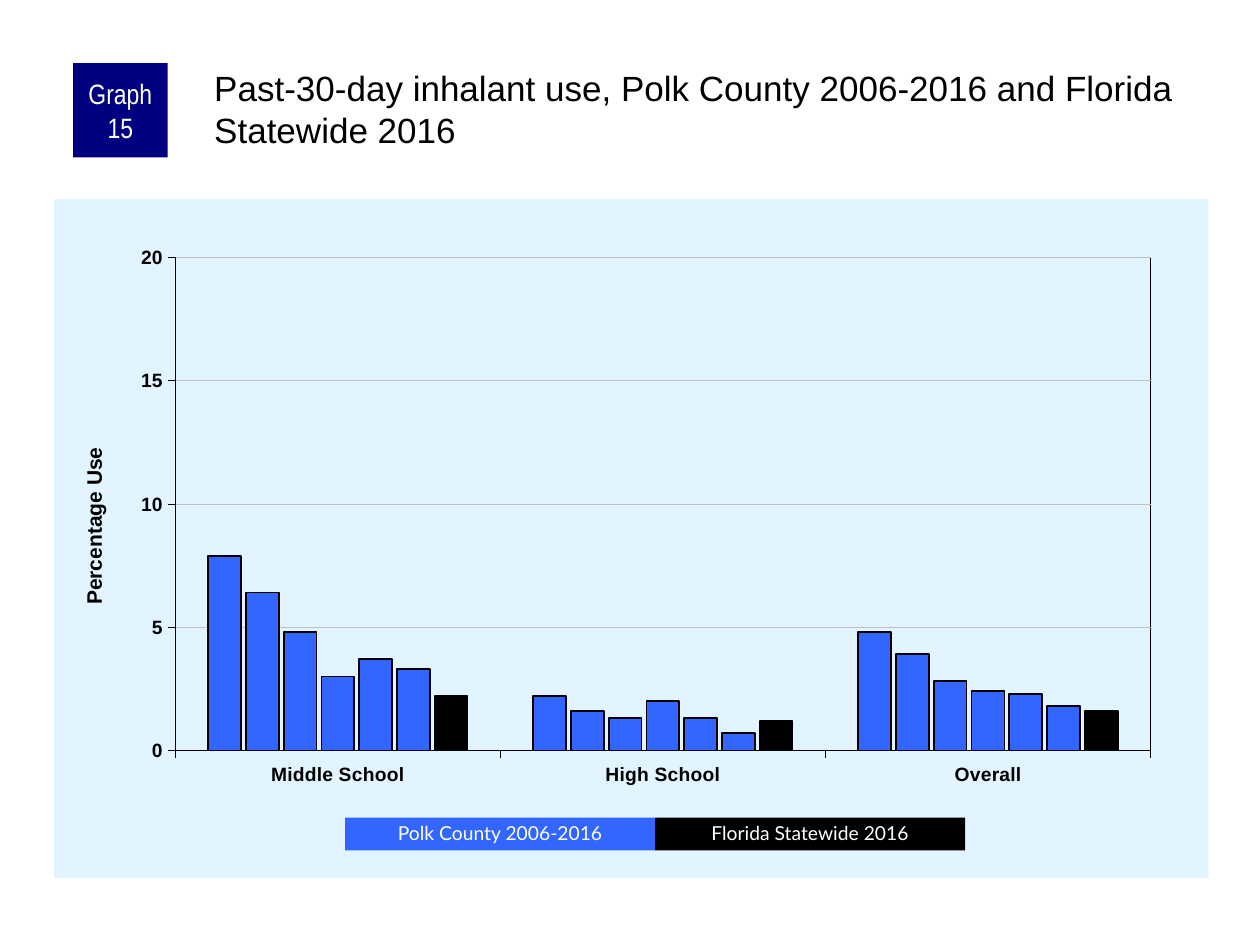
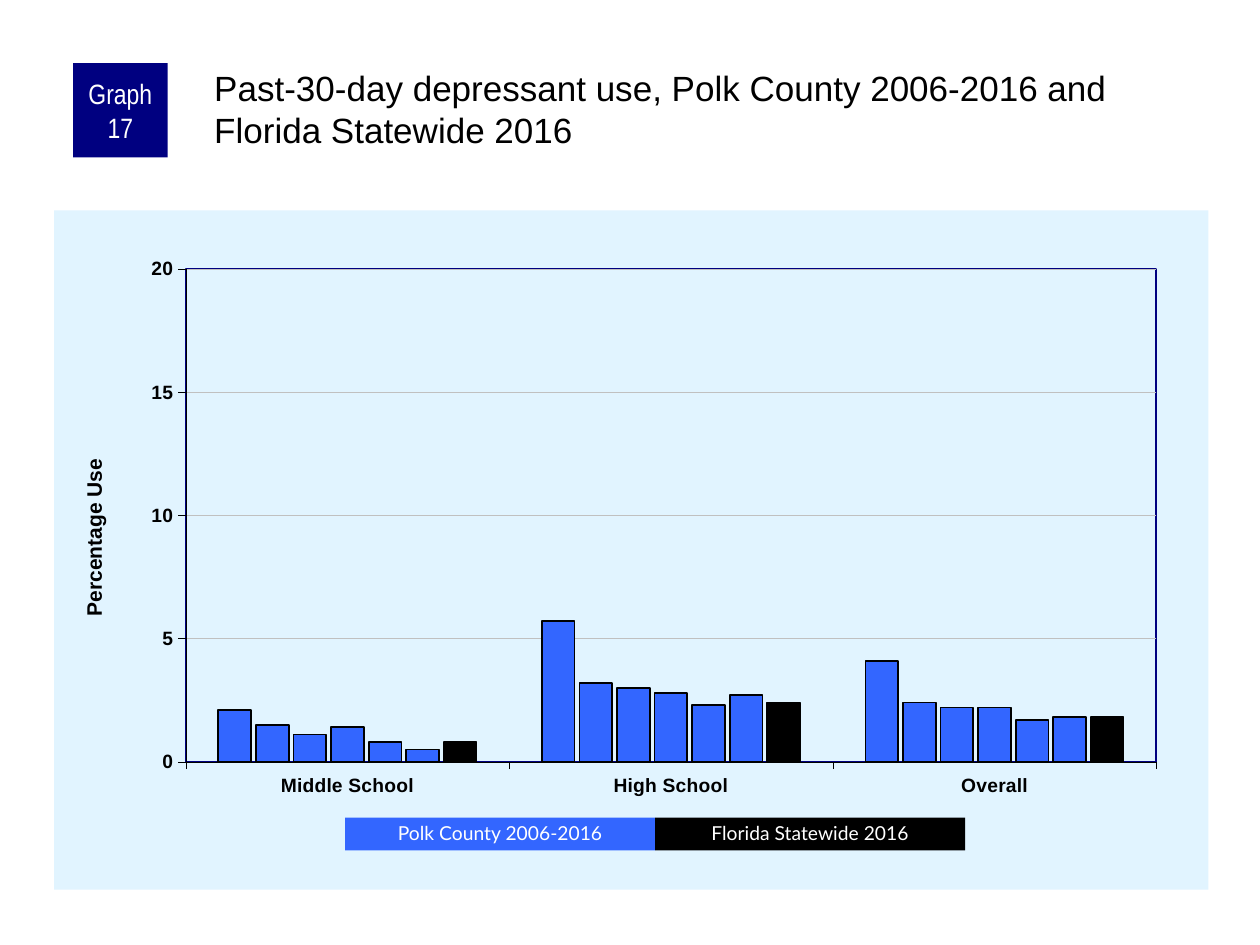
"""Builds two slides that chart past-30-day drug use by school level."""
from pptx import Presentation
from pptx.chart.data import CategoryChartData
from pptx.dml.color import RGBColor
from pptx.enum.chart import XL_CHART_TYPE, XL_TICK_MARK
from pptx.enum.shapes import MSO_SHAPE
from pptx.enum.text import MSO_ANCHOR, PP_ALIGN
from pptx.oxml import parse_xml
from pptx.oxml.ns import nsdecls, qn
from pptx.util import Inches, Pt

COLUMN = XL_CHART_TYPE.COLUMN_CLUSTERED
OUT = XL_TICK_MARK.OUTSIDE
RECT = MSO_SHAPE.RECTANGLE
MIDDLE, TOP = MSO_ANCHOR.MIDDLE, MSO_ANCHOR.TOP
CENTER, LEFT = PP_ALIGN.CENTER, PP_ALIGN.LEFT

BLUE, BLACK, WHITE, NAVY = "3366FF", "000000", "FFFFFF", "000080"
PALE, GREY = "E1F4FF", "C0C0C0"
LEVELS = ["Middle School", "High School", "Overall"]

GRAPHS = [
    {
        "label": "Graph 15",
        "title": "Past-30-day inhalant use, Polk County 2006-2016 and Florida Statewide 2016",
        "top": 1.58, "plot": (0.105, 0.086, 0.845, 0.726), "frame": (BLACK, 0.5),
        "rows": [(7.9, 2.2, 4.8), (6.4, 1.6, 3.9), (4.8, 1.3, 2.8), (3, 2, 2.4),
                 (3.7, 1.3, 2.3), (3.3, 0.7, 1.8), (2.2, 1.2, 1.6)],
    },
    {
        "label": "Graph 17",
        "title": "Past-30-day depressant use, Polk County 2006-2016 and Florida Statewide 2016",
        "top": 1.67, "plot": (0.114, 0.086, 0.841, 0.726), "frame": (NAVY, 1),
        "rows": [(2.1, 5.7, 4.1), (1.5, 3.2, 2.4), (1.1, 3, 2.2), (1.4, 2.8, 2.2),
                 (0.8, 2.3, 1.7), (0.5, 2.7, 1.8), (0.8, 2.4, 1.8)],
    },
]


def rgb(code):
    return RGBColor.from_string(code)


def place(node, index, spots, target=""):
    for old in node.findall(qn("c:layout")):
        node.remove(old)
    modes = "".join(f'<c:{key}Mode val="edge"/>' for key in "xy")
    sides = "".join(f'<c:{key} val="{spot}"/>' for key, spot in zip("xywh", spots))
    node.insert(index, parse_xml(
        f'<c:layout {nsdecls("c")}><c:manualLayout>{target}{modes}{sides}'
        "</c:manualLayout></c:layout>"))


deck = Presentation()
deck.slide_width, deck.slide_height = Inches(10), Inches(7.5)

for graph in GRAPHS:
    slide = deck.slides.add_slide(deck.slide_layouts[6])

    data = CategoryChartData()
    data.categories = LEVELS
    for count, row in enumerate(graph["rows"], 1):
        data.add_series(f"Series {count}", row)
    chart = slide.shapes.add_chart(
        COLUMN, Inches(0.43), Inches(graph["top"]), Inches(9.16), Inches(5.39), data).chart
    chart.has_title = chart.has_legend = False
    chart.font.name, chart.font.size = "Arial", Pt(8)
    chart.font.color.rgb = rgb(BLACK)

    bars = chart.plots[0]
    bars.gap_width, bars.overlap, bars.vary_by_categories = 200, -15, False
    for count, series in enumerate(bars.series, 1):
        style = series.format
        style.fill.solid()
        style.fill.fore_color.rgb = rgb(BLACK if count == len(graph["rows"]) else BLUE)
        style.line.color.rgb = rgb(BLACK)
        style.line.width = Pt(1)

    value = chart.value_axis
    for axis in (chart.category_axis, value):
        axis.major_tick_mark = OUT
        axis.format.line.color.rgb = rgb(BLACK)
        axis.format.line.width = Pt(0.25)
        for name, setting in {"name": "Arial", "size": Pt(11), "bold": True}.items():
            setattr(axis.tick_labels.font, name, setting)
        axis.tick_labels.font.color.rgb = rgb(BLACK)
    for name, setting in {"minimum_scale": 0, "maximum_scale": 20, "major_unit": 5}.items():
        setattr(value, name, setting)
    grid = value.major_gridlines.format.line
    grid.color.rgb = rgb(GREY)
    grid.width = Pt(0.25)

    frame = value.axis_title.text_frame
    frame.text = "Percentage Use"
    frame._txBody.bodyPr.set("rot", "-5400000")
    font = frame.paragraphs[0].runs[0].font
    for name, setting in {"name": "Arial", "size": Pt(12), "bold": True}.items():
        setattr(font, name, setting)
    font.color.rgb = rgb(BLACK)
    place(value.axis_title._element, 1, (0.02, 0.36))

    root = chart._chartSpace.find(qn("c:chart"))
    area = root.find(qn("c:plotArea"))
    place(area, 0, graph["plot"], '<c:layoutTarget val="inner"/>')
    edge, width = graph["frame"]
    area.append(parse_xml(
        f'<c:spPr {nsdecls("c", "a")}><a:noFill/><a:ln w="{Pt(width)}"><a:solidFill>'
        f'<a:srgbClr val="{edge}"/></a:solidFill></a:ln></c:spPr>'))
    root.addnext(parse_xml(
        f'<c:spPr {nsdecls("c", "a")}><a:solidFill><a:srgbClr val="{PALE}"/></a:solidFill>'
        "<a:ln><a:noFill/></a:ln></c:spPr>"))

    key = {"font": "Lato", "size": 11, "ink": WHITE, "pad": (0.1, 0.05, 0.1, 0.05),
           "anchor": MIDDLE, "align": CENTER, "space": 0.9}
    badge = {"font": "Arial Narrow", "size": 16, "ink": WHITE, "pad": (0.05, 0, 0.05, 0),
             "anchor": MIDDLE, "align": CENTER, "space": None}
    head = {"font": "Arial", "size": 20, "ink": BLACK, "pad": (0.03, 0.03, 0, 0),
            "anchor": TOP, "align": LEFT, "space": None}
    for text, spot, fill, look in [
        (graph["label"], (0.58, 0.5, 0.75, 0.75), NAVY, badge),
        (graph["title"], (1.67, 0.5, 7.92, 0.83), None, head),
        ("Polk County 2006-2016", (2.74, 6.49, 2.46, 0.26), BLUE, key),
        ("Florida Statewide 2016", (5.2, 6.49, 2.46, 0.26), BLACK, key),
    ]:
        spot = [Inches(side) for side in spot]
        if fill:
            box = slide.shapes.add_shape(RECT, *spot)
            box.shadow.inherit = False
            box.fill.solid()
            box.fill.fore_color.rgb = rgb(fill)
            box.line.fill.background()
        else:
            box = slide.shapes.add_textbox(*spot)
        frame = box.text_frame
        frame.word_wrap, frame.vertical_anchor = True, look["anchor"]
        for side, pad in zip(("left", "top", "right", "bottom"), look["pad"]):
            setattr(frame, f"margin_{side}", Inches(pad))
        line = frame.paragraphs[0]
        line.alignment, line.line_spacing = look["align"], look["space"]
        run = line.add_run()
        run.text = text
        run.font.name, run.font.size = look["font"], Pt(look["size"])
        run.font.color.rgb = rgb(look["ink"])

deck.save("out.pptx")
